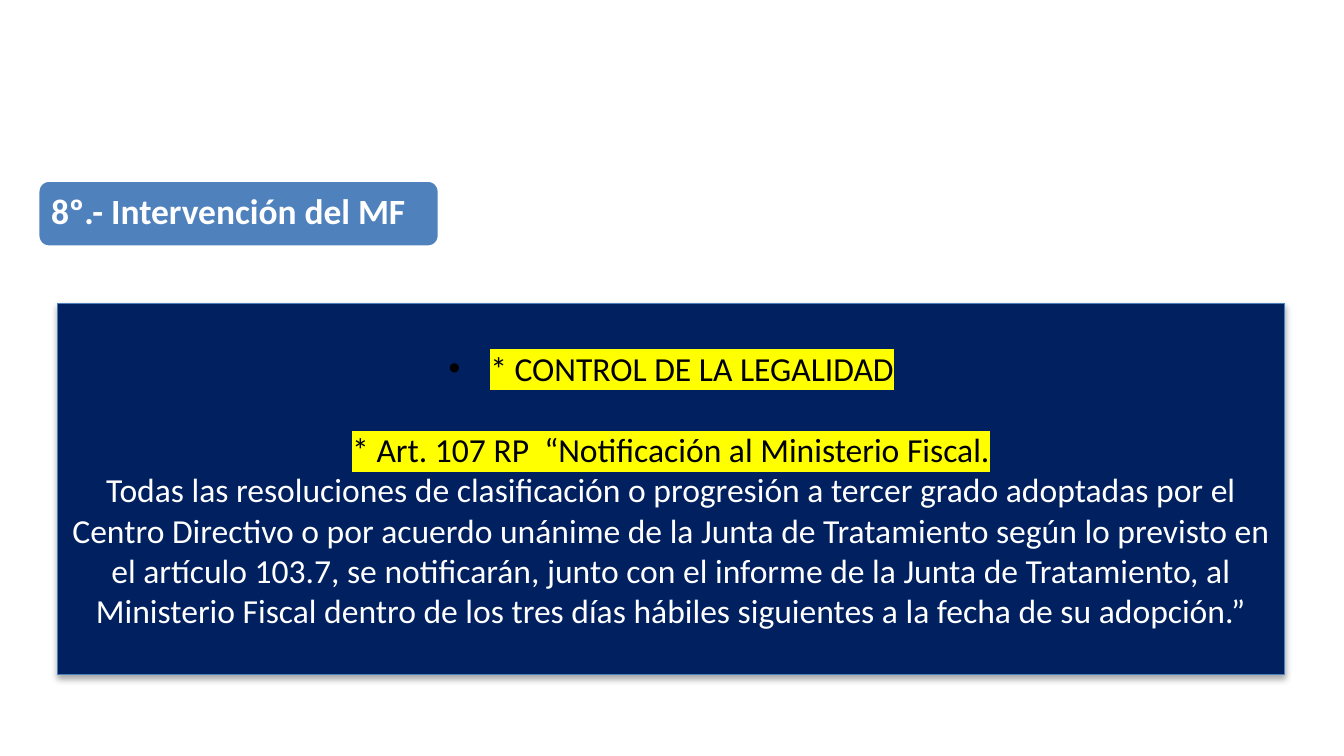
from dataclasses import dataclass

from lxml.etree import SubElement
from pptx import Presentation
from pptx.dml.color import RGBColor
from pptx.enum.shapes import MSO_SHAPE as Shape
from pptx.enum.text import MSO_ANCHOR as Anchor, MSO_AUTO_SIZE as AutoSize, PP_ALIGN as Align
from pptx.oxml.ns import qn
from pptx.shapes.autoshape import Shape as AutoShape
from pptx.slide import Slide
from pptx.text.text import Font, _Paragraph as Paragraph
from pptx.util import Inches, Pt

COLORS = {
    "white": "FFFFFF",
    "black": "000000",
    "badge": "4F81BD",
    "panel": "002060",
    "panel_line": "4B7EBC",
    "marker": "FFFF00",
}


@dataclass(frozen=True)
class Frame:
    left: float
    top: float
    width: float
    height: float

    def lengths(self) -> tuple[int, ...]:
        return tuple(Inches(v) for v in (self.left, self.top, self.width, self.height))


@dataclass(frozen=True)
class Statement:
    text: str
    marked: bool = False
    bulleted: bool = False
    space_before: float = 0


STATEMENTS = (
    Statement("* CONTROL DE LA LEGALIDAD", marked=True, bulleted=True),
    Statement("* Art. 107 RP  “Notificación al Ministerio Fiscal.", marked=True, space_before=22),
    Statement(
        "Todas las resoluciones de clasificación o progresión a tercer grado adoptadas "
        "por el Centro Directivo o por acuerdo unánime de la Junta de Tratamiento según "
        "lo previsto en el artículo 103.7, se notificarán, junto con el informe de la "
        "Junta de Tratamiento, al Ministerio Fiscal dentro de los tres días hábiles "
        "siguientes a la fecha de su adopción.”"
    ),
)


def rgb(name: str) -> RGBColor:
    return RGBColor.from_string(COLORS[name])


def style_font(font: Font, size: float, color: str, bold: bool = False) -> None:
    font.name = "Calibri"
    font.size = Pt(size)
    font.bold = bold
    font.color.rgb = rgb(color)


def add_block(page: Slide, kind: Shape, frame: Frame, fill: str, line: str, width: float) -> AutoShape:
    block = page.shapes.add_shape(kind, *frame.lengths())
    block.shadow.inherit = False
    block.fill.solid()
    block.fill.fore_color.rgb = rgb(fill)
    block.line.color.rgb = rgb(line)
    block.line.width = Pt(width)
    return block


def add_soft_shadow(block: AutoShape) -> None:
    effects = block.element.spPr.find(qn("a:effectLst"))
    shadow = SubElement(effects, qn("a:outerShdw"), blurRad=str(Pt(3.1)), dist=str(Pt(1.8)),
                        dir="5400000", rotWithShape="0")
    color = SubElement(shadow, qn("a:srgbClr"), val=COLORS["black"])
    SubElement(color, qn("a:alpha"), val="35000")


def add_bullet(para: Paragraph) -> None:
    props = para._p.get_or_add_pPr()
    props.set("marL", str(Inches(0.31)))
    props.set("indent", str(-Inches(0.31)))
    color = SubElement(props, qn("a:buClr"))
    SubElement(color, qn("a:srgbClr"), val=COLORS["black"])
    SubElement(props, qn("a:buFont"), typeface="Arial")
    SubElement(props, qn("a:buChar"), char="•")


def write_statement(para: Paragraph, statement: Statement) -> None:
    para.alignment = Align.CENTER
    if statement.space_before:
        para.space_before = Pt(statement.space_before)
    if statement.bulleted:
        add_bullet(para)
    style_font(para.font, 18, "black" if statement.marked else "white")
    span = para.add_run()
    span.text = statement.text
    if statement.marked:
        marker = SubElement(span._r.get_or_add_rPr(), qn("a:highlight"))
        SubElement(marker, qn("a:srgbClr"), val=COLORS["marker"])


def add_heading(page: Slide, text: str) -> None:
    """Put the title placeholder on top of a rounded badge."""
    badge = add_block(page, Shape.ROUNDED_RECTANGLE, Frame(0.28, 1.34, 2.99, 0.5),
                      "badge", "white", 2)
    title = page.shapes.title
    badge.element.addnext(title.element)
    title.left, title.top, title.width, title.height = Frame(0.3, 1.36, 2.94, 0.45).lengths()
    box = title.text_frame
    box.text = text
    box.word_wrap = True
    box.auto_size = AutoSize.NONE
    box.vertical_anchor = Anchor.MIDDLE
    box.margin_left = box.margin_right = box.margin_top = box.margin_bottom = Inches(0.08)
    para = box.paragraphs[0]
    para.alignment = Align.LEFT
    para.line_spacing = 0.9
    style_font(para.font, 19, "white", bold=True)


def add_panel(page: Slide, statements: tuple[Statement, ...]) -> None:
    panel = add_block(page, Shape.RECTANGLE, Frame(0.43, 2.26, 9.13, 2.76),
                      "panel", "panel_line", 0.75)
    add_soft_shadow(panel)
    box = panel.text_frame
    box.word_wrap = True
    box.vertical_anchor = Anchor.MIDDLE
    for index, statement in enumerate(statements):
        para = box.add_paragraph() if index else box.paragraphs[0]
        write_statement(para, statement)


def main() -> None:
    deck = Presentation()
    deck.slide_width = Inches(10)
    deck.slide_height = deck.slide_width * 9 // 16
    page = deck.slides.add_slide(deck.slide_layouts.get_by_name("Title Only"))
    add_heading(page, "8º.- Intervención del MF")
    add_panel(page, STATEMENTS)
    deck.save("out.pptx")


if __name__ == "__main__":
    main()
